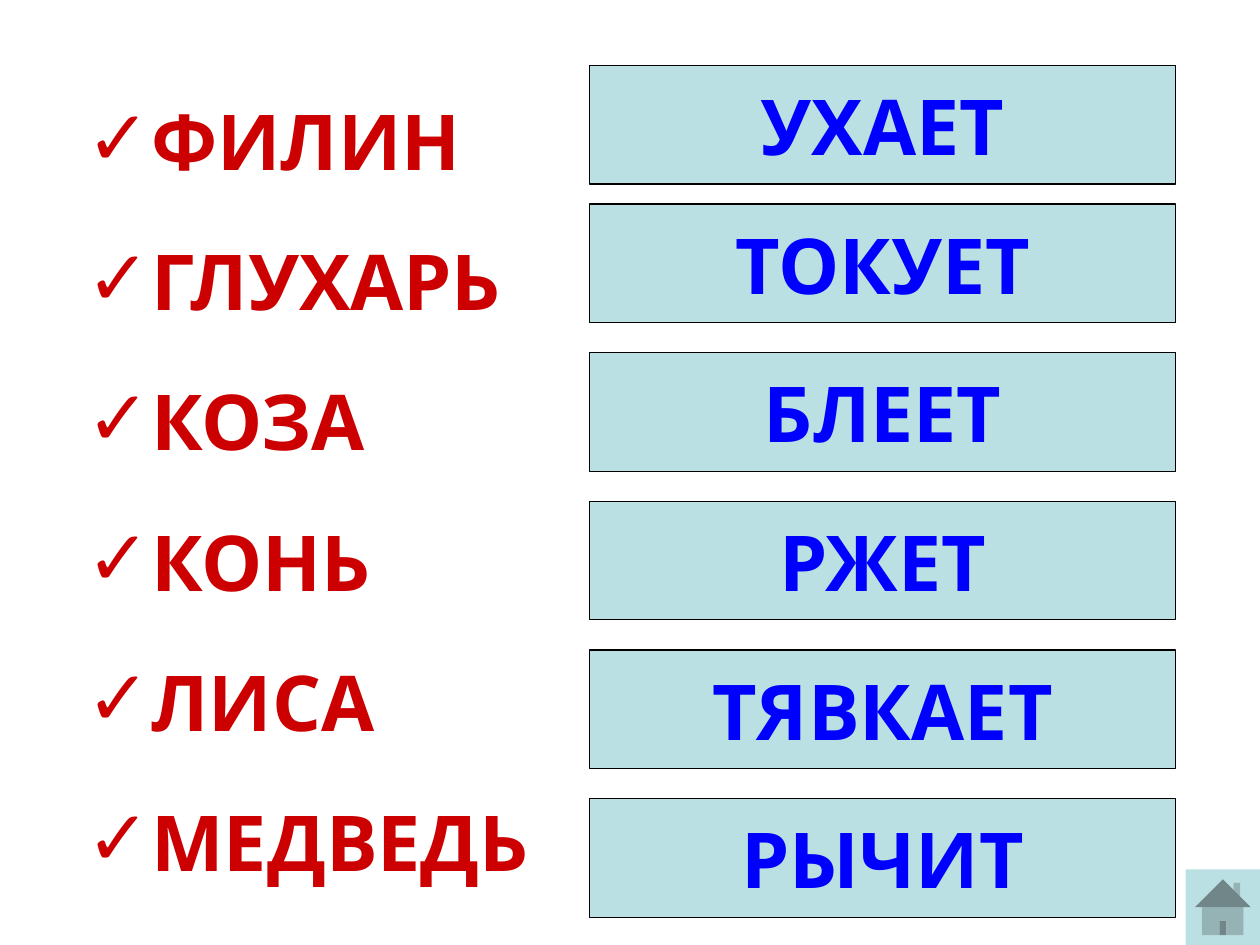
import pptx
import pptx.util
import pptx.dml.color
import pptx.enum.shapes
import pptx.enum.text
import pptx.oxml.ns
import lxml.etree

Inches = pptx.util.Inches
Pt = pptx.util.Pt
Shape = pptx.enum.shapes.MSO_SHAPE
Align = pptx.enum.text.PP_ALIGN
Anchor = pptx.enum.text.MSO_ANCHOR


def tint(code):
    return pptx.dml.color.RGBColor.from_string(code)


class Board:
    face = "Comic Neue"
    size = 44
    pale = "BBE0E3"
    edge = "000000"
    red = "CC0000"
    blue = "0000FF"

    def __init__(self, slide):
        self.slide = slide

    def style(self, para, color):
        for run in para.runs:
            run.font.name = self.face
            run.font.size = Pt(self.size)
            run.font.bold = True
            run.font.color.rgb = tint(color)

    def mark(self, para, indent):
        props = para._p.get_or_add_pPr()
        props.set("marL", str(Inches(indent)))
        props.set("indent", str(Inches(-indent)))
        for tag, key, value in (("a:buFont", "typeface", self.face),
                                ("a:buChar", "char", "✓")):
            name = pptx.oxml.ns.qn(tag)
            lxml.etree.SubElement(props, name).set(key, value)

    def list(self, words, left, top, width, height):
        box = self.slide.shapes.add_textbox(
            Inches(left), Inches(top), Inches(width), Inches(height))
        frame = box.text_frame
        frame.word_wrap = True
        frame.text = "\n".join(words)
        for index, para in enumerate(frame.paragraphs):
            self.mark(para, 0.38)
            para.line_spacing = 1.35
            if index:
                para.space_before = Pt(self.size * 0.2)
            self.style(para, self.red)

    def shape(self, kind, left, top, width, height):
        item = self.slide.shapes.add_shape(
            kind, Inches(left), Inches(top), Inches(width), Inches(height))
        item.shadow.inherit = False
        item.fill.solid()
        item.fill.fore_color.rgb = tint(self.pale)
        return item

    def card(self, word, left, top, width, height):
        item = self.shape(Shape.RECTANGLE, left, top, width, height)
        item.line.color.rgb = tint(self.edge)
        item.line.width = Pt(0.75)
        frame = item.text_frame
        frame.word_wrap = False
        frame.vertical_anchor = Anchor.MIDDLE
        frame.text = word
        para = frame.paragraphs[0]
        para.alignment = Align.CENTER
        self.style(para, self.blue)

    def home(self, left, top, width, height):
        item = self.shape(
            Shape.ACTION_BUTTON_HOME, left, top, width, height)
        item.line.fill.background()


def main():
    deck = pptx.Presentation()
    deck.slide_width = Inches(10)
    deck.slide_height = Inches(7.5)
    board = Board(deck.slides.add_slide(deck.slide_layouts[6]))

    beasts = ["ФИЛИН", "ГЛУХАРЬ", "КОЗА", "КОНЬ", "ЛИСА", "МЕДВЕДЬ"]
    board.list(beasts, 0.59, 0.44, 3.95, 6.77)

    first, *others = ["УХАЕТ", "ТОКУЕТ", "БЛЕЕТ", "РЖЕТ", "ТЯВКАЕТ", "РЫЧИТ"]
    board.card(first, 4.68, 0.52, 4.65, 0.94)
    for row, sound in enumerate(others):
        board.card(sound, 4.68, 1.62 + 1.18 * row, 4.65, 0.94)

    board.home(9.41, 6.9, 0.59, 0.6)
    deck.save("out.pptx")


if __name__ == "__main__":
    main()
